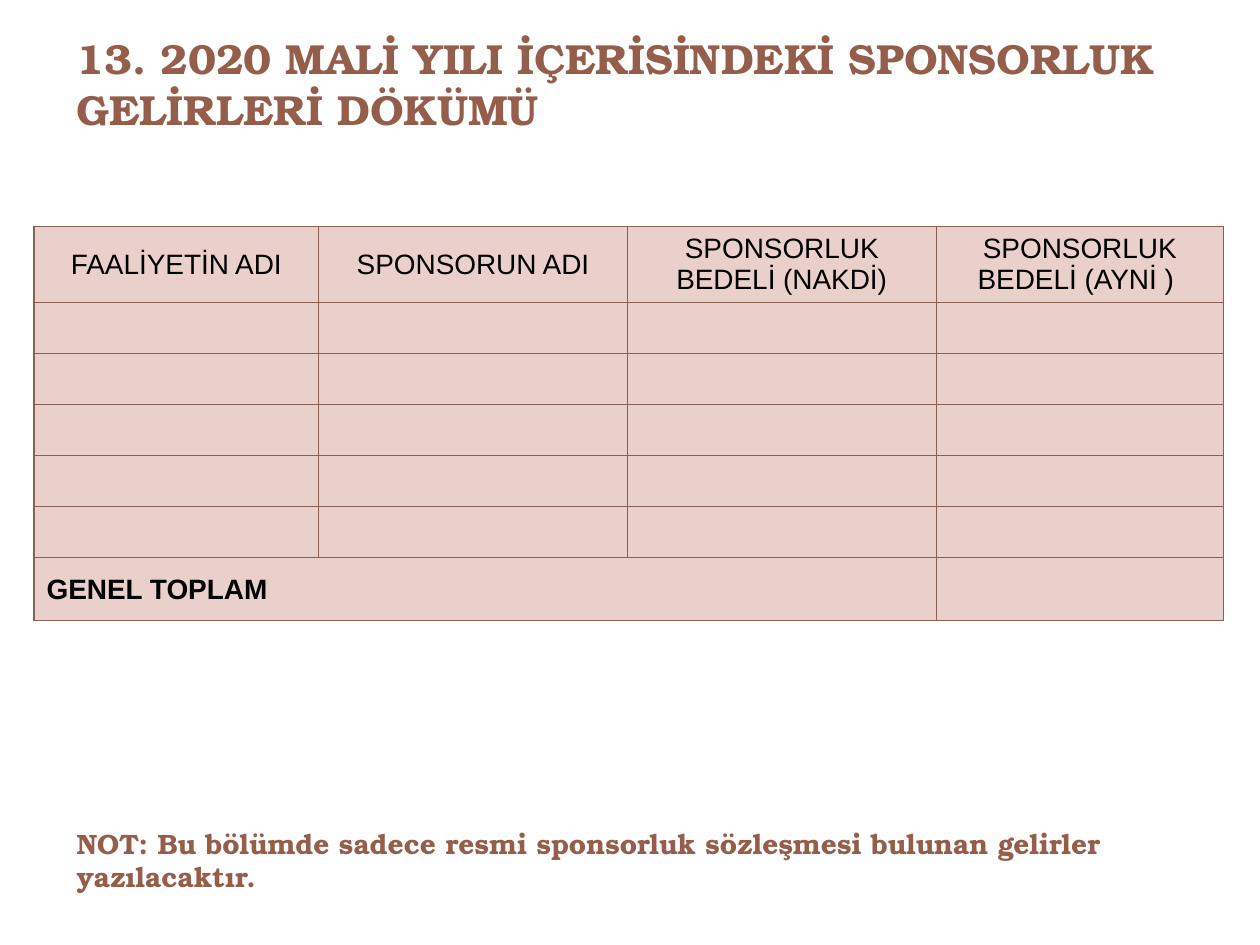
from lxml.etree import SubElement
from pptx import Presentation
from pptx.dml.color import RGBColor
from pptx.enum.text import MSO_ANCHOR, MSO_AUTO_SIZE, PP_ALIGN
from pptx.oxml.ns import qn
from pptx.util import Inches, Pt

TITLE = "13. 2020 MALİ YILI İÇERİSİNDEKİ SPONSORLUK GELİRLERİ DÖKÜMÜ"
HEADS = ["FAALİYETİN ADI", "SPONSORUN ADI",
         "SPONSORLUK BEDELİ (NAKDİ)", "SPONSORLUK BEDELİ (AYNİ ) "]
TOTAL = "GENEL TOPLAM"
NOTE = ("NOT: Bu bölümde sadece resmi sponsorluk sözleşmesi "
        "bulunan gelirler yazılacaktır.")
COLS = [2.26, 2.45, 2.45, 2.28]
ROWS = [0.6] + [0.4] * 5 + [0.5]
HUES = {"brown": "955E4B", "line": "896154", "fill": "EAD0CB", "ink": "000000"}


def style(frame, face, size, hue, bold=False, align=PP_ALIGN.LEFT):
    for para in frame.paragraphs:
        para.alignment = align
        for run in para.runs:
            font = run.font
            font.name, font.size, font.bold = face, Pt(size), bold
            font.color.rgb = RGBColor.from_string(HUES[hue])


def write(shape, text, box, size):
    shape.left, shape.top, shape.width, shape.height = map(Inches, box)
    frame = shape.text_frame
    frame.text = text
    frame.word_wrap = True
    frame.auto_size = MSO_AUTO_SIZE.NONE
    frame.vertical_anchor = MSO_ANCHOR.TOP
    style(frame, "TeX Gyre Bonum", size, "brown", True)


def paint(cell):
    props = cell._tc.get_or_add_tcPr()
    for side in ("lnL", "lnR", "lnT", "lnB"):
        line = SubElement(props, qn("a:" + side), w=str(Pt(0.75)))
        solid = SubElement(line, qn("a:solidFill"))
        SubElement(solid, qn("a:srgbClr"), val=HUES["line"])
    cell.fill.solid()
    cell.fill.fore_color.rgb = RGBColor.from_string(HUES["fill"])
    cell.vertical_anchor = MSO_ANCHOR.MIDDLE


def build():
    """Build the sponsorship income slide."""
    deck = Presentation()
    deck.slide_width, deck.slide_height = Inches(10), Inches(7.5)
    slide = deck.slides.add_slide(deck.slide_layouts[5])
    write(slide.shapes.title, TITLE, (0.51, 0.21, 9, 1.25), 24)

    table = slide.shapes.add_table(
        len(ROWS), len(COLS), Inches(0.27), Inches(1.8),
        Inches(sum(COLS)), Inches(sum(ROWS))).table
    for col, width in zip(table.columns, COLS):
        col.width = Inches(width)
    for row, height in zip(table.rows, ROWS):
        row.height = Inches(height)
    for cell in table.iter_cells():
        paint(cell)
    for cell, head in zip(table.rows[0].cells, HEADS):
        cell.text_frame.text = head
        style(cell.text_frame, "Arial", 16, "ink", align=PP_ALIGN.CENTER)
    last = len(ROWS) - 1
    total = table.cell(last, 0)
    total.merge(table.cell(last, 2))
    total.text_frame.text = TOTAL
    style(total.text_frame, "Arial", 16, "ink", True)

    note = slide.shapes.add_textbox(0, 0, 0, 0)
    write(note, NOTE, (0.51, 6.51, 9, 0.73), 16)
    deck.save("out.pptx")


if __name__ == "__main__":
    build()
